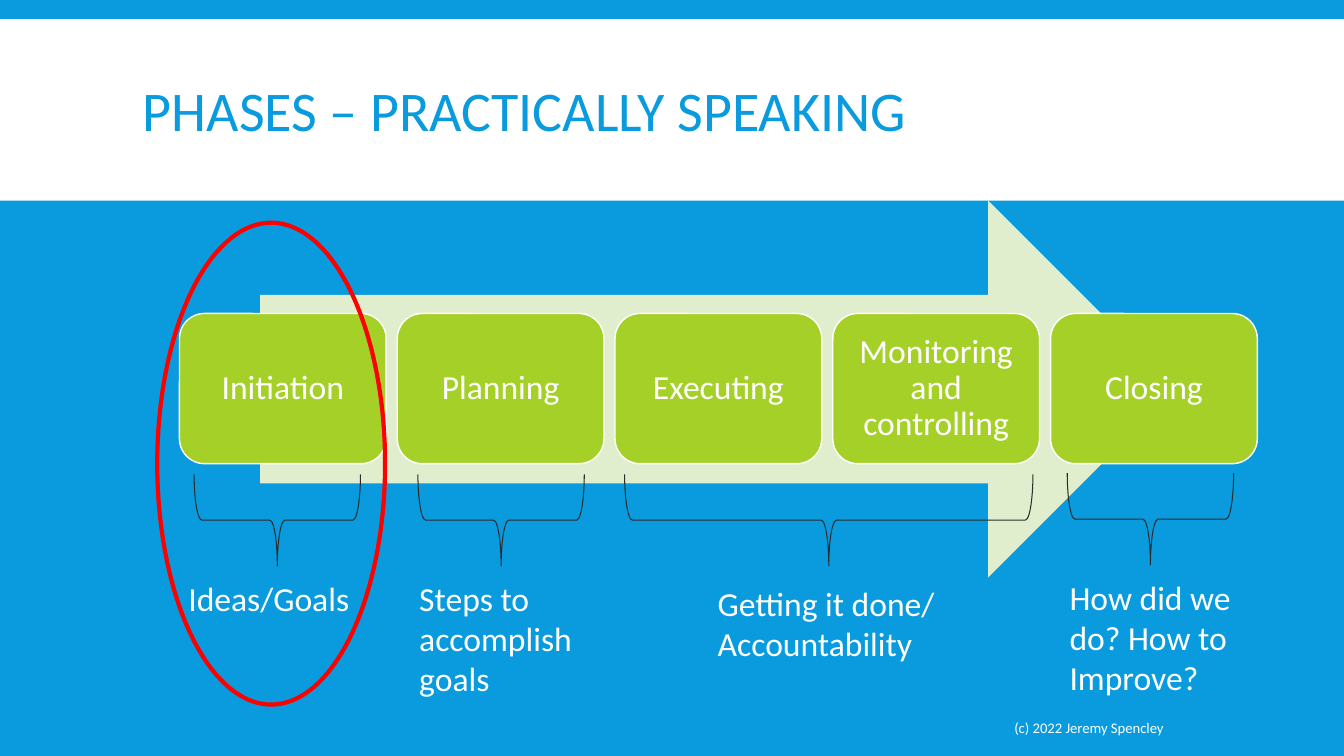
from dataclasses import dataclass

from pptx import Presentation
from pptx.dml.color import RGBColor
from pptx.enum.shapes import MSO_SHAPE
from pptx.enum.text import MSO_ANCHOR, PP_ALIGN
from pptx.shapes.autoshape import Shape
from pptx.slide import Slide
from pptx.util import Inches, Pt

RECTANGLE = MSO_SHAPE.RECTANGLE
ROUNDED = MSO_SHAPE.ROUNDED_RECTANGLE
ARROW = MSO_SHAPE.RIGHT_ARROW
BRACE = MSO_SHAPE.RIGHT_BRACE
OVAL = MSO_SHAPE.OVAL
TOP, MIDDLE = MSO_ANCHOR.TOP, MSO_ANCHOR.MIDDLE
LEFT, CENTER, RIGHT = PP_ALIGN.LEFT, PP_ALIGN.CENTER, PP_ALIGN.RIGHT

FONT = "Calibri"
BLUE, WHITE, GREEN = "099BDD", "FFFFFF", "A5D028"
PALE_GREEN, DARK, RED = "E1EECD", "2C2C2C", "FF0000"

PHASES = ["Initiation", "Planning", "Executing", "Monitoring and controlling", "Closing"]
PHASE_LEFT, PHASE_PITCH = 1.78, 2.16
BRACE_DEPTH = 0.91


@dataclass
class Box:
    left: float
    top: float
    width: float
    height: float

    def lengths(self) -> list[int]:
        return [Inches(value) for value in (self.left, self.top, self.width, self.height)]


@dataclass
class Meaning:
    text: str
    box: Box
    brace_center: float
    brace_middle: float
    brace_span: float


MEANINGS = [
    Meaning("Ideas/Goals", Box(1.77, 5.68, 1.8, 0.5), 2.75, 5.16, 1.65),
    Meaning("Steps to accomplish goals", Box(4.06, 5.68, 1.8, 1.31), 4.97, 5.16, 1.65),
    Meaning("Getting it done/ Accountability", Box(7.02, 5.73, 2.43, 0.91), 8.22, 5.16, 4.05),
    Meaning("How did we do? How to Improve?", Box(10.51, 5.67, 1.8, 1.72), 11.41, 5.15, 1.65),
]


def color(value: str) -> RGBColor:
    return RGBColor.from_string(value)


def add_shape(slide: Slide, kind: MSO_SHAPE, box: Box, fill: str | None = None,
              line: str | None = None, line_width: float = 1) -> Shape:
    shape = slide.shapes.add_shape(kind, *box.lengths())
    shape.shadow.inherit = False
    if fill:
        shape.fill.solid()
        shape.fill.fore_color.rgb = color(fill)
    else:
        shape.fill.background()
    if line:
        shape.line.color.rgb = color(line)
        shape.line.width = Pt(line_width)
    else:
        shape.line.fill.background()
    return shape


def write(shape: Shape, text: str, size: float = 24, font_color: str = WHITE,
          align: PP_ALIGN = LEFT, anchor: MSO_ANCHOR = TOP, spacing: float = 1.0) -> None:
    frame = shape.text_frame
    frame.word_wrap = True
    frame.vertical_anchor = anchor
    paragraph = frame.paragraphs[0]
    paragraph.alignment = align
    paragraph.line_spacing = spacing
    run = paragraph.add_run()
    run.text = text
    run.font.name = FONT
    run.font.size = Pt(size)
    run.font.color.rgb = color(font_color)


def add_phase(slide: Slide, index: int, name: str) -> None:
    box = Box(PHASE_LEFT + index * PHASE_PITCH, 3.11, 2.05, 1.49)
    card = add_shape(slide, ROUNDED, box, GREEN, WHITE)
    write(card, name, align=CENTER, anchor=MIDDLE, spacing=0.9)
    frame = card.text_frame
    frame.margin_left = frame.margin_right = Inches(0.1)


def add_meaning(slide: Slide, meaning: Meaning) -> None:
    box = Box(meaning.brace_center - BRACE_DEPTH / 2,
              meaning.brace_middle - meaning.brace_span / 2,
              BRACE_DEPTH, meaning.brace_span)
    brace = add_shape(slide, BRACE, box, line=DARK, line_width=0.75)
    brace.rotation = 90
    write(slide.shapes.add_textbox(*meaning.box.lengths()), meaning.text)


def main() -> None:
    presentation = Presentation()
    presentation.slide_width = Inches(13.33)
    presentation.slide_height = Inches(7.5)
    slide = presentation.slides.add_slide(presentation.slide_layouts[6])
    slide.background.fill.solid()
    slide.background.fill.fore_color.rgb = color(BLUE)

    # Title band
    add_shape(slide, RECTANGLE, Box(0, 0.19, 13.33, 1.8), WHITE)
    title = slide.shapes.add_textbox(*Box(1.32, 0.31, 10.7, 1.65).lengths())
    write(title, "PHASES – PRACTICALLY SPEAKING", 40, BLUE, anchor=MIDDLE, spacing=0.85)

    # Phases on the arrow
    add_shape(slide, ARROW, Box(2.58, 1.99, 9.09, 3.74), PALE_GREEN)
    for index, name in enumerate(PHASES):
        add_phase(slide, index, name)

    # What the phases mean in practice
    for meaning in MEANINGS:
        add_meaning(slide, meaning)

    # Highlight of the first phase
    add_shape(slide, OVAL, Box(1.56, 2.21, 2.26, 4.78), line=RED, line_width=3)

    # Footer
    footer = slide.shapes.add_textbox(*Box(6.12, 7.02, 5.52, 0.4).lengths())
    write(footer, "(c) 2022 Jeremy Spencley", 10.5, align=RIGHT, anchor=MIDDLE)

    presentation.save("out.pptx")


if __name__ == "__main__":
    main()
